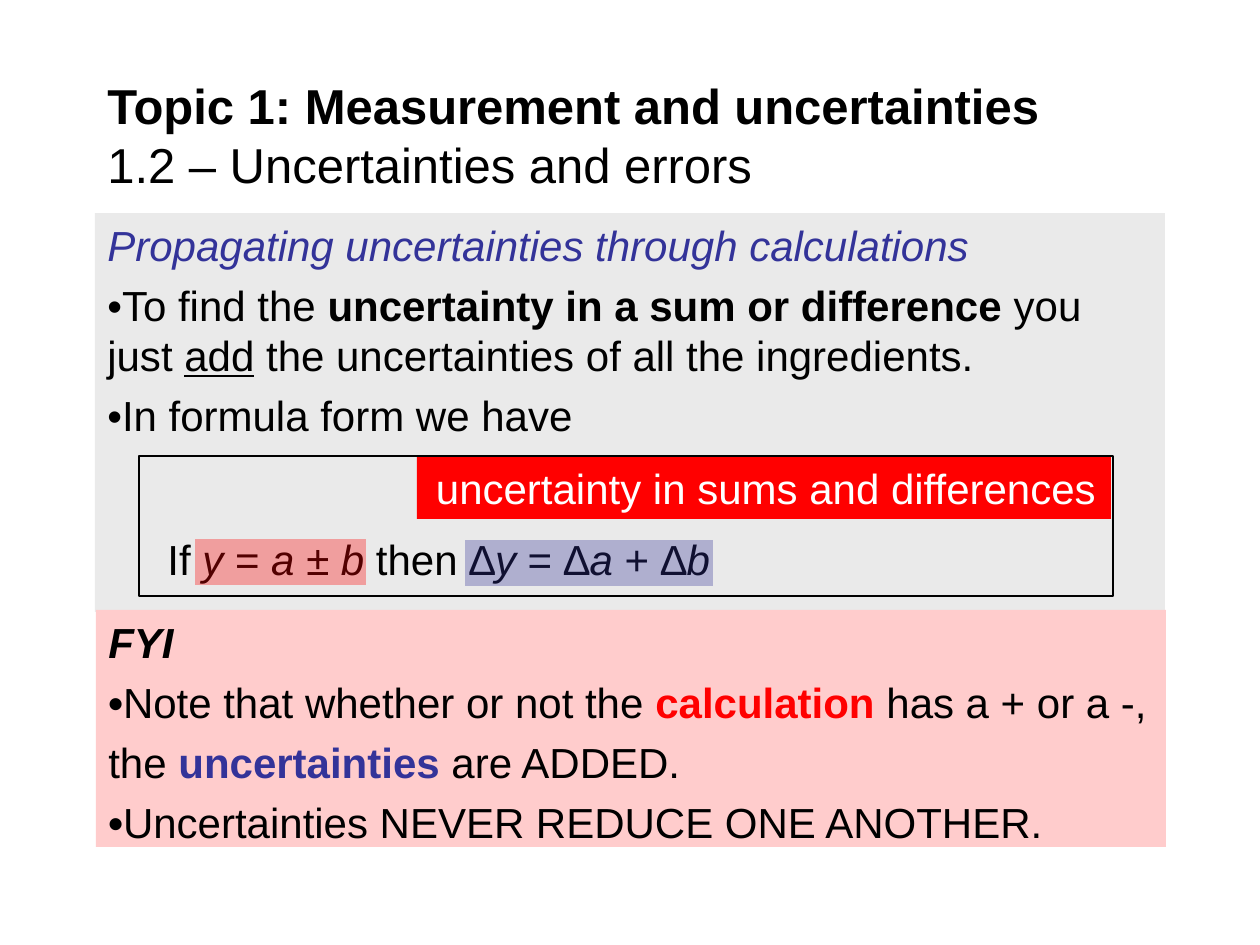
from lxml.etree import SubElement
from pptx import Presentation
from pptx.dml.color import RGBColor
from pptx.enum.shapes import MSO_SHAPE as Shape
from pptx.enum.text import MSO_ANCHOR as Anchor
from pptx.oxml.ns import qn
from pptx.util import Emu, Pt

# Theme
THEME = {
    "font": "Arial", "title": 28, "body": 24, "space": 5.5, "line": 1,
    "black": "000000", "white": "FFFFFF", "red": "FF0000", "blue": "333399",
    "gray": "EAEAEA", "pink": "FFCCCC",
}
PX = 914400 / 126
BREAK = "\n"
BOLD, ITALIC = {"bold": True}, {"italic": True}

# Content: each text is a list of paragraphs, each paragraph a list of (text, format)
TITLE = [[("Topic 1: Measurement and uncertainties", BOLD), (BREAK, {}),
          ("1.2 – Uncertainties and errors", {})]]
METHOD = [
    [("Propagating uncertainties through calculations", {"italic": True, "color": "blue"})],
    [("•To find the ", {}), ("uncertainty in a sum or difference", BOLD),
     (" you just ", {}), ("add", {"underline": True}),
     (" the uncertainties of all the ingredients.", {})],
    [("•In formula form we have", {})],
]
FORMULA = [[
    ("If ", {}), ("y", ITALIC), (" = ", {}), ("a ", ITALIC), ("± ", {}), ("b", ITALIC),
    (" then ∆", {}), ("y", ITALIC), (" = ∆", {}), ("a", ITALIC), (" + ∆", {}), ("b", ITALIC),
]]
LABEL = [[("uncertainty in sums and differences", {"color": "white"})]]
FYI = [
    [("FYI", {"bold": True, "italic": True})],
    [("•", BOLD), ("Note that whether or not the ", {}),
     ("calculation", {"bold": True, "color": "red"}), (" has a + or a -,", {})],
    [("the ", {}), ("uncertainties", {"bold": True, "color": "blue"}), (" are ADDED.", {})],
    [("•", BOLD), ("Uncertainties NEVER REDUCE ONE ANOTHER.", {})],
]

# Boxes in px, back to front: (left, top, width, height), options
BOXES = [
    ((95, 213, 1070, 399), {"fill": "gray", "text": METHOD}),
    ((95, 73, 1070, 123), {"text": TITLE, "size": "title", "space": 0,
                           "frame": {"vertical_anchor": Anchor.MIDDLE}}),
    ((155, 533, 730, 45), {"text": FORMULA, "line_spacing": 0.9}),
    ((417, 456, 694, 63), {"fill": "red", "text": LABEL, "space": 0,
                           "frame": {"margin_left": Emu(round(19 * PX)), "word_wrap": False}}),
    ((139, 456, 974, 140), {"border": "black"}),
    ((96, 610, 1070, 237), {"fill": "pink", "text": FYI}),
    ((195, 539, 171, 46), {"fill": "red", "alpha": 32}),
    ((465, 540, 248, 46), {"fill": "blue", "alpha": 32}),
]


def px(value):
    return Emu(round(value * PX))


def color(name):
    return RGBColor.from_string(THEME[name])


def write(frame, paragraphs, size="body", space=THEME["space"], line_spacing=None, settings=None):
    values = {"word_wrap": True, "vertical_anchor": Anchor.TOP, **(settings or {})}
    for name, value in values.items():
        setattr(frame, name, value)
    for index, runs in enumerate(paragraphs):
        paragraph = frame.add_paragraph() if index else frame.paragraphs[0]
        paragraph.space_before = Pt(space)
        paragraph.line_spacing = line_spacing
        for text, formats in runs:
            if text == BREAK:
                paragraph.add_line_break()
                continue
            run = paragraph.add_run()
            run.text = text
            values = {"name": THEME["font"], "size": Pt(THEME[size]), **formats}
            run.font.color.rgb = color(values.pop("color", "black"))
            for name, value in values.items():
                setattr(run.font, name, value)


def add_box(slide, place, options):
    place = [px(value) for value in place]
    fill, border = options.get("fill"), options.get("border")
    if not fill and not border:
        return slide.shapes.add_textbox(*place)
    shape = slide.shapes.add_shape(Shape.RECTANGLE, *place)
    shape.shadow.inherit = False
    if fill:
        shape.fill.solid()
        shape.fill.fore_color.rgb = color(fill)
    else:
        shape.fill.background()
    if border:
        shape.line.color.rgb = color(border)
        shape.line.width = Pt(THEME["line"])
    else:
        shape.line.fill.background()
    if "alpha" in options:
        tint = shape.fill._xPr.find(qn("a:solidFill"))[0]
        SubElement(tint, qn("a:alpha"), val=str(options["alpha"] * 1000))
    return shape


def left_align(shape):
    for paragraph in shape.text_frame.paragraphs:
        paragraph.alignment = 1


def main():
    presentation = Presentation()
    presentation.slide_width, presentation.slide_height = px(1260), px(945)
    slide = presentation.slides.add_slide(presentation.slide_layouts[6])
    for place, options in BOXES:
        shape = add_box(slide, place, options)
        if "text" in options:
            write(shape.text_frame, options["text"], options.get("size", "body"),
                  options.get("space", THEME["space"]), options.get("line_spacing"),
                  options.get("frame"))
            left_align(shape)
    presentation.save("out.pptx")


if __name__ == "__main__":
    main()
